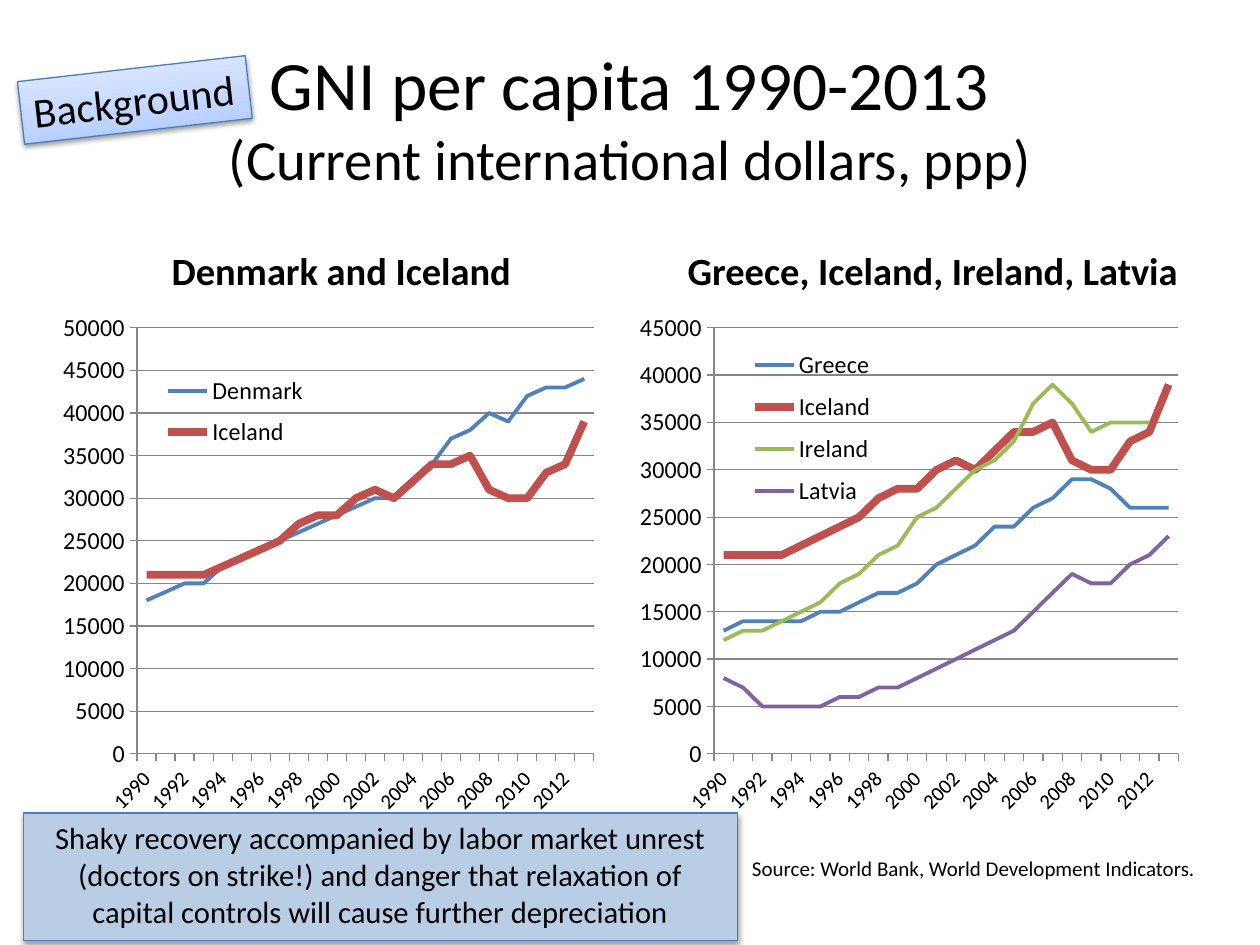
import pptx
import pptx.chart.data
import pptx.dml.color
import pptx.enum.chart
import pptx.enum.shapes
import pptx.enum.text
import pptx.oxml
import pptx.oxml.ns
import pptx.util
from pptx.util import Cm, Pt

ALIGN = pptx.enum.text.PP_ALIGN
ANCHOR = pptx.enum.text.MSO_ANCHOR
NAMESPACE = pptx.oxml.ns.nsdecls("a", "c")


def color(hex_string):
    return pptx.dml.color.RGBColor.from_string(hex_string)


def write_text(shape, lines, align, frame_format, bold=False):
    """Write (text, size) lines into one paragraph, separated by line breaks."""
    for name, value in frame_format.items():
        setattr(shape.text_frame, name, value)
    paragraph = shape.text_frame.paragraphs[0]
    paragraph.alignment = align
    for index, (text, size) in enumerate(lines):
        if index:
            paragraph.add_line_break()
        run = paragraph.add_run()
        run.text = text
        font_format = {"name": "Calibri", "size": Pt(size), "bold": bold}
        for name, value in font_format.items():
            setattr(run.font, name, value)
        run.font.color.rgb = color("000000")


presentation = pptx.Presentation()
presentation.slide_width = Cm(25.4)
presentation.slide_height = Cm(19.05)
slide = presentation.slides.add_slide(presentation.slide_layouts[6])

# Title, chart headings and source line
middle = {"word_wrap": True, "vertical_anchor": ANCHOR.MIDDLE}
bottom = {"word_wrap": True, "vertical_anchor": ANCHOR.BOTTOM}
unwrapped = {"word_wrap": False}
text_boxes = [
    ((1.27, 0.76, 22.86, 3.18),
     [("GNI per capita 1990-2013", 39.6), ("(Current international dollars, ppp)", 32.4)],
     ALIGN.CENTER, middle, False),
    ((1.27, 4.26, 11.22, 1.78), [("Denmark and Iceland", 22)], ALIGN.CENTER, bottom, True),
    ((12.9, 4.26, 11.81, 1.78), [("Greece, Iceland, Ireland, Latvia", 22)],
     ALIGN.CENTER, bottom, True),
    ((14.91, 17.12, 9.65, 0.77),
     [("Source: World Bank, World Development Indicators.", 12)], ALIGN.LEFT, unwrapped, False),
]
for place, lines, align, frame_format, bold in text_boxes:
    text_box = slide.shapes.add_textbox(*map(Cm, place))
    write_text(text_box, lines, align, frame_format, bold)

# Chart data: GNI per capita in thousands
years = [str(year) for year in range(1990, 2014)]
denmark = [18, 19, 20, 20, 22, 23, 24, 25, 26, 27, 28, 29,
           30, 30, 32, 34, 37, 38, 40, 39, 42, 43, 43, 44]
iceland = [21, 21, 21, 21, 22, 23, 24, 25, 27, 28, 28, 30,
           31, 30, 32, 34, 34, 35, 31, 30, 30, 33, 34, 39]
greece = [13, 14, 14, 14, 14, 15, 15, 16, 17, 17, 18, 20,
          21, 22, 24, 24, 26, 27, 29, 29, 28, 26, 26, 26]
ireland = [12, 13, 13, 14, 15, 16, 18, 19, 21, 22, 25, 26,
           28, 30, 31, 33, 37, 39, 37, 34, 35, 35, 35, None]
latvia = [8, 7, 5, 5, 5, 5, 6, 6, 7, 7, 8, 9,
          10, 11, 12, 13, 15, 17, 19, 18, 18, 20, 21, 23]
series_colors = ["4F81BD", "C0504D", "9BBB59", "8064A2"]

# left edge, axis maximum, plot width, legend top and height, series
charts = [
    (1.27, 50000, 0.838, 0.12, 0.17, {"Denmark": denmark, "Iceland": iceland}),
    (12.9, 45000, 0.852, 0.07, 0.33,
     {"Greece": greece, "Iceland": iceland, "Ireland": ireland, "Latvia": latvia}),
]
for left, maximum, plot_width, legend_top, legend_height, countries in charts:
    chart_data = pptx.chart.data.CategoryChartData(number_format="General")
    chart_data.categories = years
    for country, thousands in countries.items():
        chart_data.add_series(
            country, [None if value is None else value * 1000 for value in thousands])
    chart = slide.shapes.add_chart(
        pptx.enum.chart.XL_CHART_TYPE.LINE, Cm(left), Cm(6.05), Cm(11.23), Cm(10.97),
        chart_data).chart
    chart.has_title = False
    chart.has_legend = True
    chart.legend.position = pptx.enum.chart.XL_LEGEND_POSITION.RIGHT
    chart.legend.include_in_layout = False
    chart.plots[0].vary_by_categories = False

    # Axes and fonts
    value_axis, category_axis = chart.value_axis, chart.category_axis
    axis_format = {"minimum_scale": 0, "maximum_scale": maximum, "major_unit": 5000,
                   "has_major_gridlines": True}
    for name, value in axis_format.items():
        setattr(value_axis, name, value)
    for part, size in [(chart, 10), (category_axis.tick_labels, 12),
                       (value_axis.tick_labels, 14), (chart.legend, 14)]:
        part.font.name = "Calibri"
        part.font.size = Pt(size)
        part.font.color.rgb = color("000000")
    for part in (value_axis, category_axis, value_axis.major_gridlines):
        part.format.line.color.rgb = color("868686")
        part.format.line.width = Pt(0.75)
    for axis in (value_axis, category_axis):
        axis.major_tick_mark = pptx.enum.chart.XL_TICK_MARK.OUTSIDE
    category_axis._element.txPr.bodyPr.set("rot", "-2700000")

    # Lines, with Iceland emphasised
    for series, line_color in zip(chart.plots[0].series, series_colors):
        series.smooth = False
        series.marker.style = pptx.enum.chart.XL_MARKER_STYLE.NONE
        series.format.line.color.rgb = color(line_color)
        series.format.line.width = Pt(4.5 if series.name == "Iceland" else 2.25)

    # Fixed places of plot area and legend
    plot_area = chart._chartSpace.chart.plotArea
    for parent, index, target, box in [
            (plot_area, 0, '<c:layoutTarget val="inner"/>', (0.114, 0.051, plot_width, 0.783)),
            (chart.legend._element, 1, "", (0.12, legend_top, 0.35, legend_height))]:
        modes = "".join(f'<c:{side}Mode val="edge"/>' for side in "xy")
        sizes = "".join(f'<c:{side} val="{value}"/>' for side, value in zip("xywh", box))
        for old_layout in parent.findall(pptx.oxml.ns.qn("c:layout")):
            parent.remove(old_layout)
        parent.insert(index, pptx.oxml.parse_xml(
            f"<c:layout {NAMESPACE}><c:manualLayout>{target}{modes}{sizes}"
            "</c:manualLayout></c:layout>"))

# Comment box and tilted tag, both with a soft shadow
comment = ("Shaky recovery accompanied by labor market unrest (doctors on strike!) and danger "
           "that relaxation of capital controls will cause further depreciation")
boxes = [
    ((0.47, 16.39, 14.4, 2.57), 0, [("B9CDE5", 0)], comment, 17.5, ALIGN.CENTER, True),
    ((0.41, 1.38, 4.62, 1.27), -6.5, [("A4C4FF", 0), ("BFD4FF", 35), ("E6EEFF", 100)],
     "Background", 24, ALIGN.LEFT, False),
]
for place, rotation, stops, text, size, align, wrap in boxes:
    shape = slide.shapes.add_shape(pptx.enum.shapes.MSO_SHAPE.RECTANGLE, *map(Cm, place))
    shape.rotation = rotation
    shape.line.color.rgb = color("4B7EBC")
    shape.line.width = Pt(0.75)
    shape.fill.solid()
    shape.fill.fore_color.rgb = color(stops[0][0])
    properties = shape._element.spPr
    if len(stops) > 1:
        stop_xml = "".join(f'<a:gs pos="{position * 1000}"><a:srgbClr val="{value}"/></a:gs>'
                           for value, position in stops)
        solid_fill = properties.find(pptx.oxml.ns.qn("a:solidFill"))
        properties.replace(solid_fill, pptx.oxml.parse_xml(
            f'<a:gradFill {NAMESPACE} rotWithShape="1"><a:gsLst>{stop_xml}</a:gsLst>'
            '<a:lin ang="16200000" scaled="0"/></a:gradFill>'))
    shape.shadow.inherit = False
    properties.find(pptx.oxml.ns.qn("a:effectLst")).append(pptx.oxml.parse_xml(
        f'<a:outerShdw {NAMESPACE} blurRad="{Pt(3.1)}" dist="{Pt(1.6)}" dir="5400000" '
        'rotWithShape="0"><a:srgbClr val="000000"><a:alpha val="38000"/></a:srgbClr>'
        '</a:outerShdw>'))
    write_text(shape, [(text, size)], align,
               {"word_wrap": wrap, "vertical_anchor": ANCHOR.TOP})

presentation.save("out.pptx")
